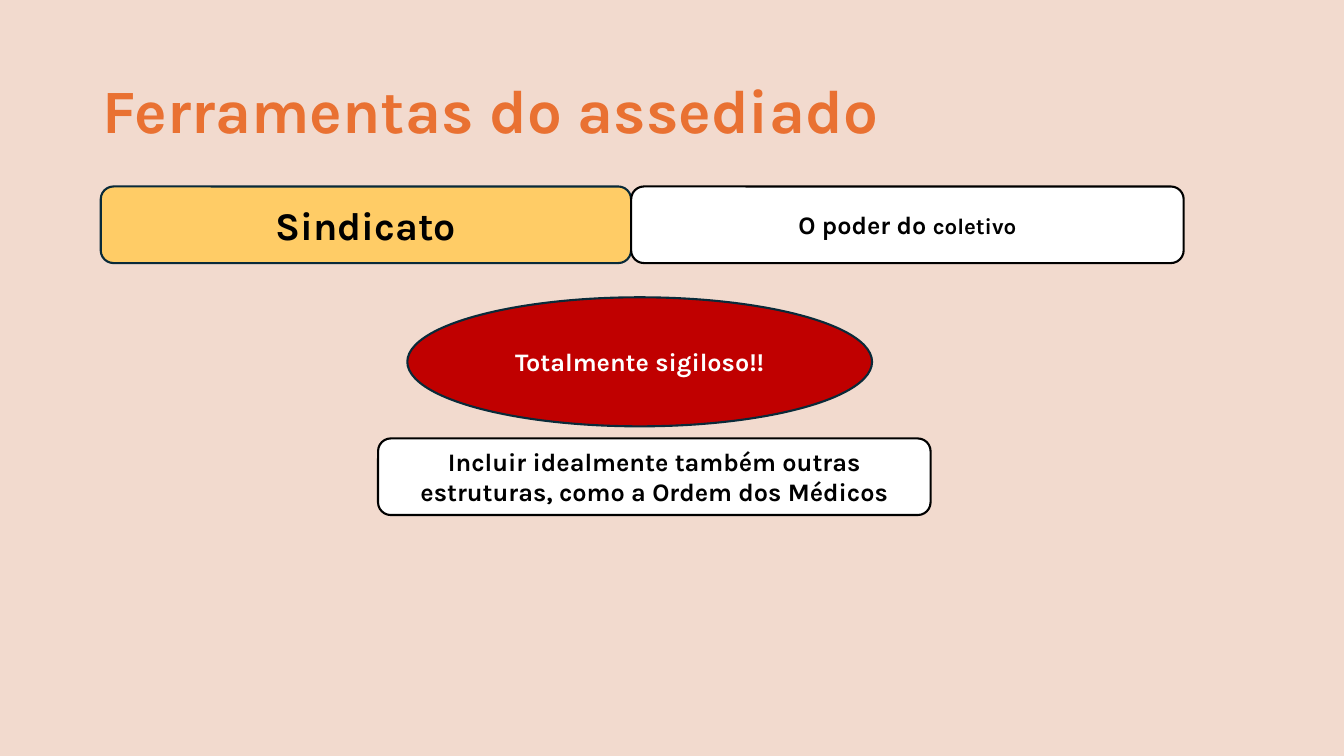
"""Build the slide on the union as a tool for harassed workers."""
from pptx import Presentation
from pptx.dml.color import RGBColor
from pptx.enum.shapes import MSO_SHAPE as Shape
from pptx.enum.text import MSO_ANCHOR as Anchor, PP_ALIGN as Align
from pptx.util import Inches, Pt

WIDTH, HEIGHT = Inches(13.33), Inches(7.5)
BLACK, WHITE, NAVY = "000000", "FFFFFF", "092A39"
LEFT, TOP, BAR_HEIGHT = 7.5, 24.67, 10.13
UNION_WIDTH, NOTE_WIDTH = 39.46, 41.11


def paint(color_format, color):
    """Set a colour from its hex string."""
    color_format.rgb = RGBColor.from_string(color)


def place(left, top, width, height):
    """Turn percentages of the slide into lengths."""
    return [int(side * share / 100) for side, share in
            zip((WIDTH, HEIGHT, WIDTH, HEIGHT), (left, top, width, height))]


def write(holder, runs, color, align, spacing=1.0):
    """Fill a holder with one paragraph of (wording, size) runs."""
    frame = holder.text_frame
    frame.word_wrap = True
    frame.vertical_anchor = Anchor.MIDDLE
    paragraph = frame.paragraphs[0]
    paragraph.alignment = align
    paragraph.line_spacing = spacing
    for wording, size in runs:
        run = paragraph.add_run()
        run.text = wording
        for name, value in {"name": "Karla", "size": Pt(size), "bold": True}.items():
            setattr(run.font, name, value)
        paint(run.font.color, color)


def add_heading(slide, wording, area):
    """Add the orange slide heading."""
    heading = slide.shapes.add_textbox(*place(*area))
    write(heading, [(wording, 44)], "E97132", Align.LEFT, 0.9)


def add_message(slide, outline, area, runs, fill=WHITE, border=BLACK, ink=BLACK):
    """Add a filled, bordered shape with a centred message."""
    message = slide.shapes.add_shape(outline, *place(*area))
    message.shadow.inherit = False
    message.fill.solid()
    paint(message.fill.fore_color, fill)
    paint(message.line.color, border)
    message.line.width = Pt(1.5)
    write(message, runs, ink, Align.CENTER)


def main():
    """Compose and save the slide."""
    deck = Presentation()
    deck.slide_width, deck.slide_height = WIDTH, HEIGHT
    slide = deck.slides.add_slide(deck.slide_layouts[6])
    slide.background.fill.solid()
    paint(slide.background.fill.fore_color, "F2DACE")

    add_heading(slide, "Ferramentas do assediado", (6.9, 5.33, 86.27, 19.33))
    add_message(slide, Shape.ROUNDED_RECTANGLE, (LEFT, TOP, UNION_WIDTH, BAR_HEIGHT),
                [("Sindicato", 28)], fill="FFCC66", border=NAVY)
    add_message(slide, Shape.ROUNDED_RECTANGLE,
                (LEFT + UNION_WIDTH, TOP, NOTE_WIDTH, BAR_HEIGHT),
                [("O poder do ", 18), ("coletivo", 16)])
    add_message(slide, Shape.ROUNDED_RECTANGLE, (28.13, 58, NOTE_WIDTH, BAR_HEIGHT),
                [("Incluir idealmente também outras estruturas, "
                  "como a Ordem dos Médicos", 18)])
    add_message(slide, Shape.OVAL, (30.31, 39.33, 34.58, 17.07),
                [("Totalmente sigiloso!!", 18)], fill="C00000", border=NAVY, ink=WHITE)
    deck.save("out.pptx")


if __name__ == "__main__":
    main()
